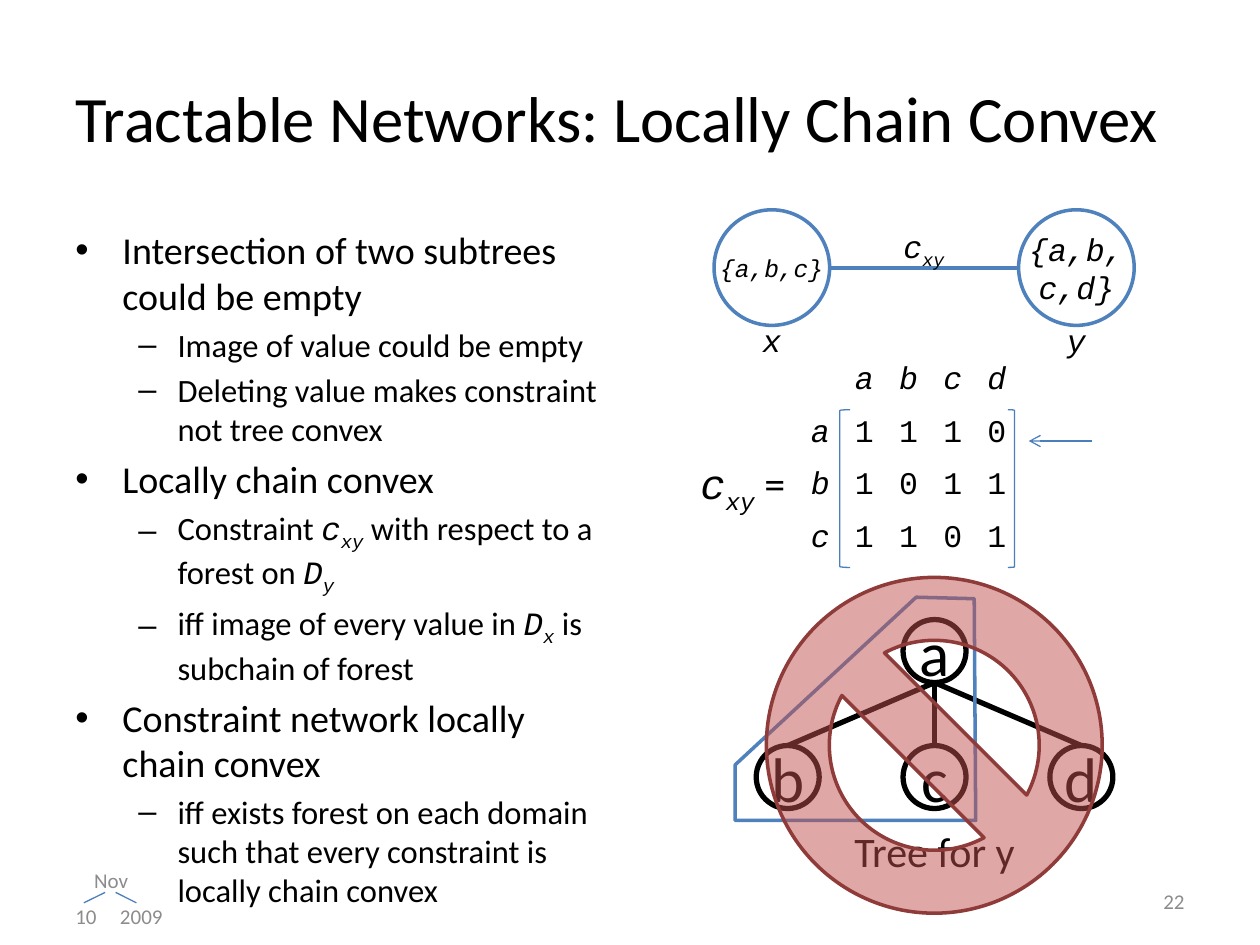
from typing import NamedTuple

from lxml.etree import SubElement
from pptx import Presentation
from pptx.dml.color import RGBColor
from pptx.enum.shapes import MSO_CONNECTOR, MSO_SHAPE
from pptx.enum.text import MSO_ANCHOR, PP_ALIGN
from pptx.oxml.ns import qn
from pptx.util import Cm, Pt

BLACK = RGBColor(0x00, 0x00, 0x00)
WHITE = RGBColor(0xFF, 0xFF, 0xFF)
GRAY = RGBColor(0x8C, 0x8C, 0x8C)
BLUE = RGBColor(0x4F, 0x81, 0xBD)
THIN_BLUE = RGBColor(0x4B, 0x7E, 0xBC)
RED = RGBColor(0xC0, 0x50, 0x4D)
DARK_RED = RGBColor(0x8E, 0x3B, 0x39)
SANS, MONO = "Calibri", "Courier New"


class Run(NamedTuple):
    text: str
    math: bool = False
    sub: bool = False


class Bullet(NamedTuple):
    level: int
    runs: list[Run]


class BulletStyle(NamedTuple):
    mark: str
    size: float
    margin: float
    hang: float
    before: float


class Node(NamedTuple):
    label: str
    center: float
    top: float


class Domain(NamedTuple):
    variable: str
    center: float
    values: list[str]
    size: float


def symbol(name: str, index: str) -> list[Run]:
    return [Run(name, True), Run(index, True, True)]


BULLET_STYLES = [BulletStyle("•", 21.7, 0.95, 0.95, 4.3),
                 BulletStyle("–", 18.6, 2.06, 0.79, 3.7)]
BULLETS = [
    Bullet(0, [Run("Intersection of two subtrees could be empty")]),
    Bullet(1, [Run("Image of value could be empty")]),
    Bullet(1, [Run("Deleting value makes constraint not tree convex")]),
    Bullet(0, [Run("Locally chain convex")]),
    Bullet(1, [Run("Constraint "), *symbol("c", "xy"),
               Run(" with respect to a forest on "), *symbol("D", "y")]),
    Bullet(1, [Run("iff image of every value in "), *symbol("D", "x"),
               Run(" is subchain of forest")]),
    Bullet(0, [Run("Constraint network locally chain convex")]),
    Bullet(1, [Run("iff exists forest on each domain such that every "
                   "constraint is locally chain convex")]),
]
MATRIX = [" abcd", "a1110", "b1011", "c1101"]

NODE_SIZE = 1.27
ROOT = Node("a", 18.84, 12.49)
CHILDREN = [Node(label, ROOT.center + 2.96 * step, 15.03)
            for step, label in zip((-1, 0, 1), "bcd")]
DOMAIN_SIZE = 2.33
DOMAIN_TOP = 4.23
DOMAINS = [Domain("x", 15.56, ["{a,b,c}"], 14),
           Domain("y", 21.7, ["{a,b,", "c,d}"], 18)]
CHAIN = [(18.47, 12.04), (14.82, 15.42), (14.82, 16.54), (19.67, 16.54), (19.64, 12.07)]

presentation = Presentation()
presentation.slide_width, presentation.slide_height = Cm(25.4), Cm(19.05)
slide = presentation.slides.add_slide(presentation.slide_layouts[6])
shapes = slide.shapes


def write(paragraph, text: str, *, size: float, font: str = SANS, color: RGBColor = BLACK,
          italic: bool = False, sub: bool = False) -> None:
    run = paragraph.add_run()
    run.text = text
    run.font.size, run.font.name = Pt(size), font
    run.font.italic, run.font.color.rgb = italic, color
    if sub:
        run.font._element.set("baseline", "-25000")


def write_runs(paragraph, runs: list[Run], size: float) -> None:
    for text, math, sub in runs:
        write(paragraph, text, size=size, font=MONO if math else SANS, italic=math, sub=sub)


def add_box(left: float, top: float, width: float, height: float,
            align=PP_ALIGN.LEFT, anchor=MSO_ANCHOR.TOP):
    """Add a wrapping text box and return its text frame."""
    frame = shapes.add_textbox(Cm(left), Cm(top), Cm(width), Cm(height)).text_frame
    frame.word_wrap = True
    frame.vertical_anchor = anchor
    frame.paragraphs[0].alignment = align
    return frame


def add_outline(kind, left: float, top: float, width: float, height: float,
                color: RGBColor, weight: float):
    shape = shapes.add_shape(kind, Cm(left), Cm(top), Cm(width), Cm(height))
    style_outline(shape, color, weight)
    return shape


def style_outline(shape, color: RGBColor, weight: float) -> None:
    shape.shadow.inherit = False
    shape.fill.background()
    shape.line.color.rgb, shape.line.width = color, Pt(weight)


def add_circle(center: float, top: float, diameter: float, lines: list[str],
               color: RGBColor, weight: float, **text_format) -> None:
    circle = add_outline(MSO_SHAPE.OVAL, center - diameter / 2, top,
                         diameter, diameter, color, weight)
    circle.fill.solid()
    circle.fill.fore_color.rgb = WHITE
    frame = circle.text_frame
    frame.word_wrap = False
    frame.vertical_anchor = MSO_ANCHOR.MIDDLE
    frame.margin_left = frame.margin_right = frame.margin_top = frame.margin_bottom = 0
    for number, line in enumerate(lines):
        paragraph = frame.add_paragraph() if number else frame.paragraphs[0]
        paragraph.alignment = PP_ALIGN.CENTER
        write(paragraph, line, **text_format)


def add_line(x1: float, y1: float, x2: float, y2: float, color: RGBColor = THIN_BLUE,
             weight: float = 0.75, arrow: bool = False) -> None:
    line = shapes.add_connector(MSO_CONNECTOR.STRAIGHT, Cm(x1), Cm(y1), Cm(x2), Cm(y2))
    line.line.color.rgb, line.line.width = color, Pt(weight)
    if arrow:
        SubElement(line.line._get_or_add_ln(), qn("a:tailEnd"), type="arrow")
    SubElement(line._element.spPr, qn("a:effectLst"))


def add_bullets() -> None:
    frame = add_box(1.27, 4.45, 11.23, 12.57)
    for number, (level, runs) in enumerate(BULLETS):
        style = BULLET_STYLES[level]
        paragraph = frame.add_paragraph() if number else frame.paragraphs[0]
        paragraph.level = level
        if number:
            paragraph.space_before = Pt(style.before)
        properties = paragraph._p.get_or_add_pPr()
        properties.set("marL", str(Cm(style.margin)))
        properties.set("indent", str(-Cm(style.hang)))
        SubElement(properties, qn("a:buFont"), typeface="Arial")
        SubElement(properties, qn("a:buChar"), char=style.mark)
        write_runs(paragraph, runs, style.size)


def add_matrix() -> None:
    column, row = 0.89, 1.06
    table = shapes.add_table(4, 5, Cm(16.09), Cm(7.2), Cm(5 * column), Cm(4 * row)).table
    table.first_row = table.horz_banding = False
    for table_column in table.columns:
        table_column.width = Cm(column)
    for r, values in enumerate(MATRIX):
        table.rows[r].height = Cm(row)
        for c, value in enumerate(values):
            cell = table.cell(r, c)
            cell.fill.background()
            cell.margin_left = cell.margin_right = 0
            if value.strip():
                paragraph = cell.text_frame.paragraphs[0]
                paragraph.alignment = PP_ALIGN.CENTER
                write(paragraph, value, size=18, font=MONO, italic=value.isalpha())
    add_outline(MSO_SHAPE.LEFT_BRACKET, 16.93, 8.26, 0.21, 3.18, THIN_BLUE, 0.75)
    add_outline(MSO_SHAPE.RIGHT_BRACKET, 20.32, 8.26, 0.13, 3.18, THIN_BLUE, 0.75)
    equation = add_box(13.12, 9.1, 2.96, 1.27, PP_ALIGN.RIGHT)
    write_runs(equation.paragraphs[0], [*symbol("c", "xy"), Run(" =")], 24)
    add_line(22.01, 8.89, 20.74, 8.89, arrow=True)


def add_network() -> None:
    for variable, center, values, size in DOMAINS:
        add_circle(center, DOMAIN_TOP, DOMAIN_SIZE, values, BLUE, 2,
                   size=size, font=MONO, italic=True)
        label = add_box(center - 0.53, 6.35, 1.06, 1.02, PP_ALIGN.CENTER)
        write(label.paragraphs[0], variable, size=18, font=MONO, italic=True)
    add_line(16.72, 5.4, 20.53, 5.4, BLUE, 2)
    constraint = add_box(16.72, 4.45, 3.81, 1.02, PP_ALIGN.CENTER)
    write_runs(constraint.paragraphs[0], symbol("c", "xy"), 18)


def add_tree() -> None:
    for node in (ROOT, *CHILDREN):
        add_circle(node.center, node.top, NODE_SIZE, [node.label], BLACK, 3, size=36)
    for child in CHILDREN:
        add_line(ROOT.center, ROOT.top + NODE_SIZE, child.center, child.top, BLACK, 3)
    caption = add_box(15.24, 16.51, 7.2, 1.27, PP_ALIGN.CENTER)
    write(caption.paragraphs[0], "Tree for y", size=24)

    corners = [(Cm(x), Cm(y)) for x, y in CHAIN]
    builder = shapes.build_freeform(*corners[0])
    builder.add_line_segments(corners[1:], close=True)
    style_outline(builder.convert_to_shape(), BLUE, 2)

    ban = add_outline(MSO_SHAPE.NO_SYMBOL, 15.45, 11.64, 6.77, 6.77, DARK_RED, 2)
    ban.fill.solid()
    ban.fill.fore_color.rgb = RED
    SubElement(ban._element.spPr.find(f".//{qn('a:srgbClr')}"), qn("a:alpha"), val="50000")


def add_footer() -> None:
    date = add_box(1.27, 17.6, 5.93, 1.02, anchor=MSO_ANCHOR.MIDDLE)
    month, day_year = date.paragraphs[0], date.add_paragraph()
    month.space_after = day_year.space_after = Pt(6)
    month._p.get_or_add_pPr().set("marL", str(Cm(0.38)))
    write(month, "Nov", size=12, color=GRAY)
    tabs = SubElement(day_year._p.get_or_add_pPr(), qn("a:tabLst"))
    SubElement(tabs, qn("a:tab"), pos=str(Cm(0.9)), algn="l")
    write(day_year, "10\t2009", size=12, color=GRAY)
    add_line(1.69, 18.2, 2.12, 17.99)
    add_line(2.33, 17.99, 2.75, 18.2)
    number = add_box(18.2, 17.65, 5.93, 1.02, PP_ALIGN.RIGHT, MSO_ANCHOR.MIDDLE)
    write(number.paragraphs[0], "22", size=12, color=GRAY)


title = add_box(1.27, 0.76, 22.86, 3.18, anchor=MSO_ANCHOR.MIDDLE)
write(title.paragraphs[0], "Tractable Networks: Locally Chain Convex", size=37)
add_bullets()
add_matrix()
add_network()
add_tree()
add_footer()
presentation.save("out.pptx")
